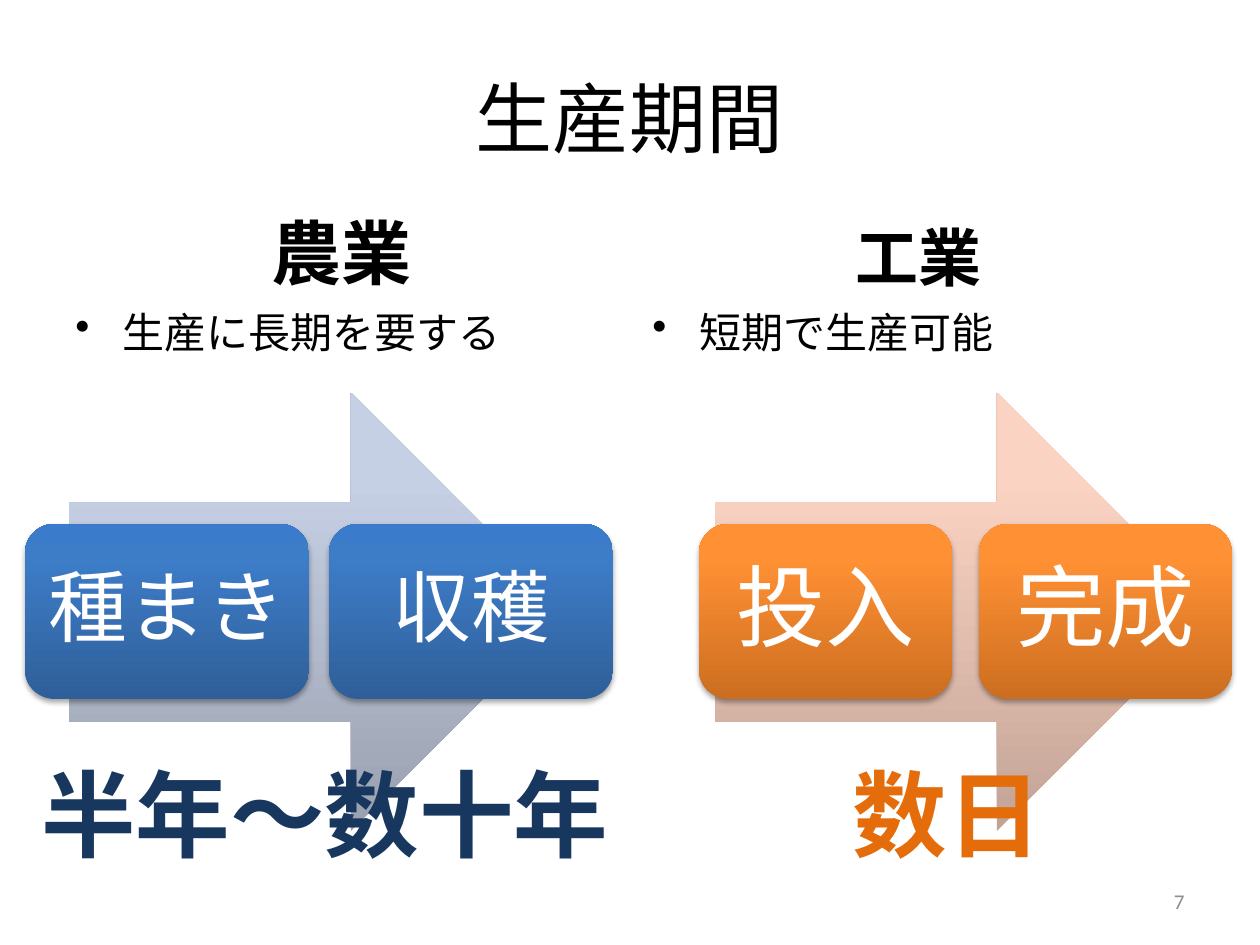
from copy import deepcopy

from lxml import etree
from pptx import Presentation
from pptx.dml.color import RGBColor
from pptx.enum.shapes import MSO_SHAPE
from pptx.enum.text import MSO_ANCHOR, PP_ALIGN
from pptx.oxml.ns import qn
from pptx.util import Emu, Pt

ARROW, ROUND_RECT = MSO_SHAPE.RIGHT_ARROW, MSO_SHAPE.ROUNDED_RECTANGLE
TOP, MIDDLE, BOTTOM = MSO_ANCHOR.TOP, MSO_ANCHOR.MIDDLE, MSO_ANCHOR.BOTTOM
LEFT, CENTER, RIGHT = PP_ALIGN.LEFT, PP_ALIGN.CENTER, PP_ALIGN.RIGHT

BLACK = RGBColor(0x00, 0x00, 0x00)
WHITE = RGBColor(0xFF, 0xFF, 0xFF)
GRAY = RGBColor(0x8C, 0x8C, 0x8C)
NAVY = RGBColor(0x17, 0x37, 0x5E)
ORANGE = RGBColor(0xE4, 0x6C, 0x0A)
PALE_BLUES = (RGBColor(0x99, 0xA0, 0xAF), RGBColor(0xC6, 0xD0, 0xE4), RGBColor(0xC7, 0xD1, 0xE5))
BLUES = (RGBColor(0x2F, 0x5F, 0x99), RGBColor(0x3D, 0x7C, 0xC7), RGBColor(0x3A, 0x7C, 0xCB))
PALE_ORANGES = (RGBColor(0xC1, 0xA3, 0x96), RGBColor(0xFB, 0xD3, 0xC2), RGBColor(0xFD, 0xD4, 0xC2))
ORANGES = (RGBColor(0xCC, 0x6E, 0x20), RGBColor(0xFF, 0x90, 0x34), RGBColor(0xFF, 0x91, 0x36))


class Deck:
    """Holds the style and the current slide, and draws each kind of element."""

    FONT = "Calibri"
    BODY_FONT = "Noto Sans CJK JP"
    STOPS = (0, 0.8, 1)
    INDENT = 342900

    def __init__(self, prs):
        self.slide = prs.slides.add_slide(prs.slide_layouts[6])

    @staticmethod
    def px(*lengths):
        return [Emu(round(n * 914400 / 126)) for n in lengths]

    def label(self, tf, text, size, color, align=CENTER, anchor=MIDDLE, bold=False, font=FONT):
        tf.vertical_anchor = anchor
        p = tf.paragraphs[0]
        p.text = text
        p.alignment = align
        p.font.name = font
        p.font.size = Pt(size)
        p.font.bold = bold
        p.font.color.rgb = color
        return p

    def text(self, box, text, size, color=BLACK, wrap=True, **style):
        tf = self.slide.shapes.add_textbox(*self.px(*box)).text_frame
        tf.word_wrap = wrap
        return self.label(tf, text, size, color, **style)

    def bullet(self, box, text, size):
        p = self.text(box, text, size, align=LEFT, anchor=TOP, font=self.BODY_FONT)
        pPr = p._p.get_or_add_pPr()
        pPr.set("marL", str(self.INDENT))
        pPr.set("indent", str(-self.INDENT))
        mark = etree.Element(qn("a:buChar"), char="•")
        pPr.insert_element_before(mark, "a:tabLst", "a:defRPr", "a:extLst")

    def shape(self, kind, box, colors):
        s = self.slide.shapes.add_shape(kind, *self.px(*box))
        s.fill.gradient()
        s.fill.gradient_angle = 90
        stops = s._element.spPr.find(".//" + qn("a:gsLst"))
        stops.append(deepcopy(stops[-1]))
        for stop, position, color in zip(s.fill.gradient_stops, self.STOPS, colors):
            stop.position = position
            stop.color.rgb = color
        s.line.fill.background()
        s.shadow.inherit = False
        return s

    def step(self, box, text, size, colors):
        s = self.shape(ROUND_RECT, box, colors)
        effects = s._element.spPr.find(qn("a:effectLst"))
        shadow = etree.SubElement(effects, qn("a:outerShdw"), blurRad="40000", dist="23000",
                                  dir="5400000", rotWithShape="0")
        tint = etree.SubElement(shadow, qn("a:srgbClr"), val="000000")
        etree.SubElement(tint, qn("a:alpha"), val="35000")
        tf = s.text_frame
        tf.margin_left = tf.margin_right = 0
        tf.word_wrap = False
        self.label(tf, text, size, WHITE).line_spacing = 0.9


def main():
    prs = Presentation()
    prs.slide_width, prs.slide_height = Deck.px(1260, 945)
    deck = Deck(prs)
    deck.text((63, 38, 1134, 158), "生産期間", 44)

    columns = (
        (63, "農業", 40, "生産に長期を要する"),
        (640, "工業", 36, "短期で生産可能"),
    )
    for x, heading, size, point in columns:
        deck.text((x, 212, 557, 88), heading, size, anchor=BOTTOM, bold=True)
        deck.bullet((x, 300, 557, 544), point, 24)

    processes = (
        (69, PALE_BLUES, BLUES, 45, 284, ((25, "種まき"), (329, "収穫"))),
        (715, PALE_ORANGES, ORANGES, 51, 253, ((699, "投入"), (979, "完成"))),
    )
    for arrow_x, pale, strong, size, width, steps in processes:
        deck.shape(ARROW, (arrow_x, 393, 501, 438), pale)
        for x, name in steps:
            deck.step((x, 524, width, 175), name, size, strong)

    for x, width, period, color in ((19, 611, "半年～数十年", NAVY), (837, 220, "数日", ORANGE)):
        deck.text((x, 750, width, 127), period, 54, color, wrap=False, anchor=TOP, bold=True)

    deck.text((903, 876, 294, 50), "7", 12, GRAY, align=RIGHT)
    prs.save("out.pptx")


if __name__ == "__main__":
    main()
